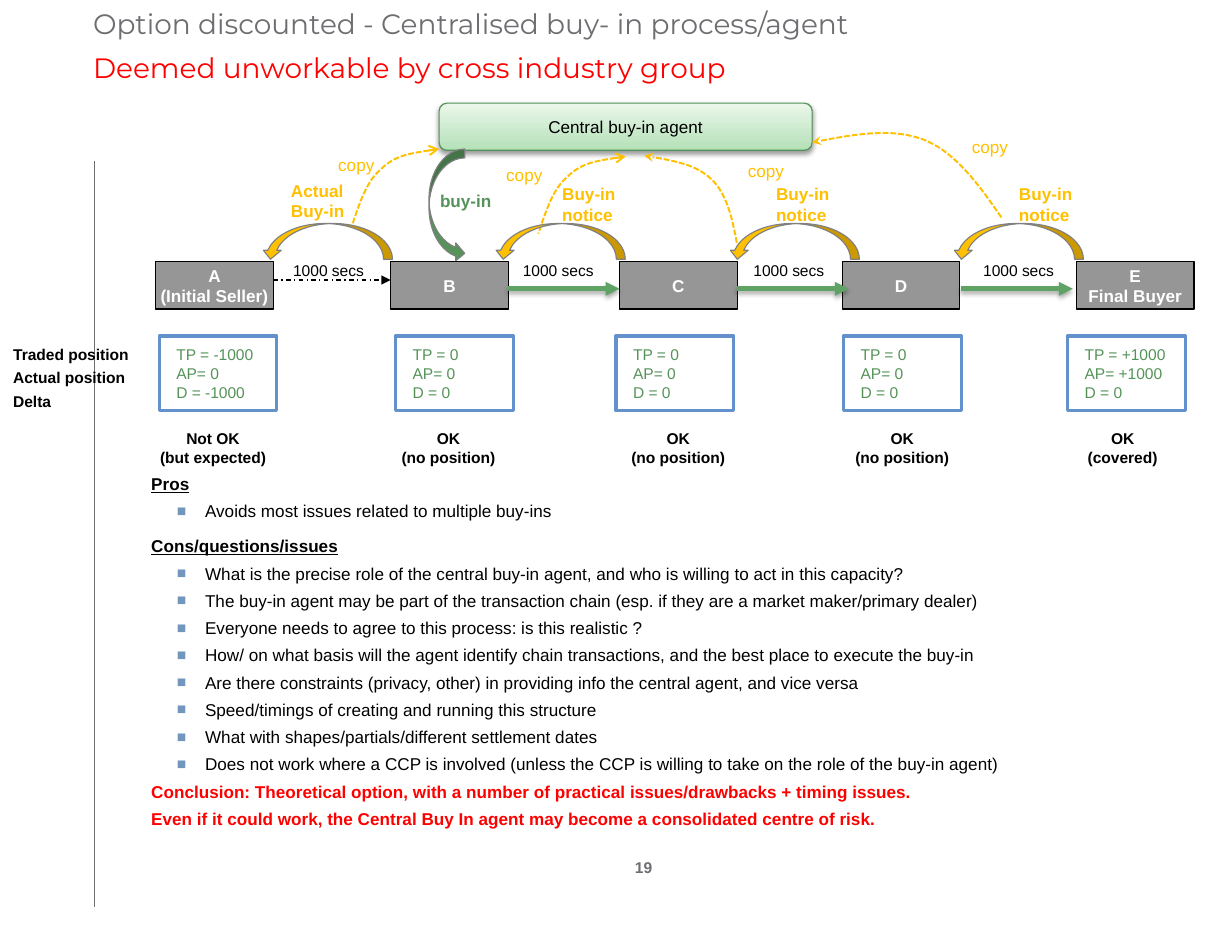
from lxml import etree
from pptx import Presentation
from pptx import oxml
from pptx import util as u
from pptx.dml import color
from pptx.enum import dml, shapes, text
from pptx.oxml import ns

BLACK = color.RGBColor(0x00, 0x00, 0x00)
WHITE = color.RGBColor(0xFF, 0xFF, 0xFF)
RED = color.RGBColor(0xFF, 0x00, 0x00)
SLATE = color.RGBColor(0x6D, 0x6E, 0x71)
GREY = color.RGBColor(0x96, 0x96, 0x96)
EDGE = color.RGBColor(0x80, 0x80, 0x80)
GREEN = color.RGBColor(0x55, 0x93, 0x5A)
ARROW_GREEN = color.RGBColor(0x5F, 0xA3, 0x64)
AGENT_EDGE = color.RGBColor(0x52, 0x91, 0x57)
AGENT_DARK = color.RGBColor(0xB4, 0xE1, 0xB7)
AGENT_LIGHT = color.RGBColor(0xEB, 0xF7, 0xEB)
GOLD = color.RGBColor(0xFF, 0xC0, 0x00)
BLUE = color.RGBColor(0x64, 0x90, 0xCB)
BULLET = color.RGBColor(0x73, 0x97, 0xBC)

SIDES = ("margin_left", "margin_top", "margin_right", "margin_bottom")
LEFT, CENTER = text.PP_ALIGN.LEFT, text.PP_ALIGN.CENTER
TOP, MIDDLE, BOTTOM = text.MSO_ANCHOR.TOP, text.MSO_ANCHOR.MIDDLE, text.MSO_ANCHOR.BOTTOM


class Page:
    font = "Arial"

    def __init__(self, deck):
        self.slide = deck.slides.add_slide(deck.slide_layouts[1])
        self.shapes = self.slide.shapes

    def apply(self, target, values):
        for name, value in values.items():
            setattr(target, name, value)

    def place(self, box, at):
        self.apply(box, dict(zip(("left", "top", "width", "height"), map(u.Cm, at))))

    def frame(self, box, anchor, margins):
        values = {"word_wrap": True, "auto_size": text.MSO_AUTO_SIZE.NONE, "vertical_anchor": anchor}
        values.update(zip(SIDES, map(u.Cm, margins)))
        self.apply(box.text_frame, values)
        return box.text_frame

    def span(self, para, words, size, ink, **values):
        span = para.add_run()
        span.text = words
        self.apply(span.font, {"name": self.font, "size": u.Pt(size), **values})
        span.font.color.rgb = ink

    def lettering(self, box, lines, size, ink, align=LEFT, anchor=TOP, margins=(0, 0, 0, 0), gap=0, **values):
        frame = self.frame(box, anchor, margins)
        for number, line in enumerate(lines):
            para = frame.add_paragraph() if number else frame.paragraphs[0]
            para.alignment = align
            para.space_before = u.Pt(gap if number else 0)
            for order, words in enumerate(line.split("\v")):
                if order:
                    para.add_line_break()
                self.span(para, words, size, ink, **values)

    def label(self, at, lines, size=10, ink=BLACK, **values):
        box = self.shapes.add_textbox(*map(u.Cm, at))
        self.lettering(box, lines, size, ink, **values)

    def tag(self, left, top, words, ink=GOLD, bold=True):
        self.label((left, top, 1.91, 1.19), [words], 11, ink, margins=(0.25, 0.13, 0.25, 0.13), bold=bold)

    def shape(self, kind, at, fill, edge, weight=0.75, turn=0):
        box = self.shapes.add_shape(kind, *map(u.Cm, at))
        box.shadow.inherit = False
        box.rotation = turn
        box.fill.solid()
        box.fill.fore_color.rgb = fill
        self.stroke(box, edge, weight)
        return box

    def stroke(self, item, ink, weight, dash=None, **ends):
        item.line.color.rgb = ink
        item.line.width = u.Pt(weight)
        if dash:
            item.line.dash_style = dash
        outline = item._element.spPr.find(ns.qn("a:ln"))
        for end, head in ends.items():
            etree.SubElement(outline, ns.qn("a:" + end), type=head)

    def shade(self, item, alpha):
        effects = item._element.spPr.find(ns.qn("a:effectLst"))
        effects.append(oxml.parse_xml(
            f'<a:outerShdw {ns.nsdecls("a")} blurRad="39370" dist="21000" dir="5400000" rotWithShape="0">'
            f'<a:srgbClr val="000000"><a:alpha val="{alpha * 1000}"/></a:srgbClr></a:outerShdw>'))

    def line(self, start, end, ink, weight, dash=None, **ends):
        line = self.shapes.add_connector(shapes.MSO_CONNECTOR.STRAIGHT, *map(u.Cm, start + end))
        self.stroke(line, ink, weight, dash, **ends)
        etree.SubElement(line._element.spPr, ns.qn("a:effectLst"))
        return line

    def curve(self, points, **ends):
        points = [(u.Cm(x), u.Cm(y)) for x, y in points]
        builder = self.shapes.build_freeform(*points[0])
        builder.add_line_segments(points[1:], close=False)
        curve = builder.convert_to_shape()
        curve.shadow.inherit = False
        curve.fill.background()
        outline = curve._element.find(".//" + ns.qn("a:path"))
        steps = outline.findall(ns.qn("a:lnTo"))
        for first in range(0, len(steps), 3):
            bend = etree.SubElement(outline, ns.qn("a:cubicBezTo"))
            for step in steps[first:first + 3]:
                bend.append(step[0])
                outline.remove(step)
        self.stroke(curve, GOLD, 1.25, dml.MSO_LINE.SQUARE_DOT, **ends)

    def title(self, at, lines):
        box = self.shapes.title
        self.place(box, at)
        para = self.frame(box, BOTTOM, (0, 0, 0, 0)).paragraphs[0]
        self.apply(para, {"alignment": LEFT, "line_spacing": u.Pt(27.9)})
        for number, (words, ink) in enumerate(lines):
            if number:
                para.add_line_break()
            self.span(para, words, 18, ink, name="Montserrat")

    def body(self, at, items):
        box = self.slide.placeholders[1]
        self.place(box, at)
        frame = self.frame(box, TOP, (0.25, 0.1, 0.1, 0.1))
        for number, (kind, words) in enumerate(items):
            para = frame.add_paragraph() if number else frame.paragraphs[0]
            bulleted = kind == "point"
            props = para._p.get_or_add_pPr()
            props.set("marL", str(u.Cm(1.22 if bulleted else 0.64)))
            props.set("indent", str(u.Cm(-0.64)))
            if bulleted:
                mark = etree.SubElement(props, ns.qn("a:buClr"))
                etree.SubElement(mark, ns.qn("a:srgbClr"), val=str(BULLET))
                etree.SubElement(props, ns.qn("a:buSzPct"), val="92000")
                etree.SubElement(props, ns.qn("a:buFont"), typeface="Arial")
                etree.SubElement(props, ns.qn("a:buChar"), char="■")
            else:
                etree.SubElement(props, ns.qn("a:buNone"))
            gap = (8 if kind == "head" else 3) if number else 0
            self.apply(para, {"level": int(bulleted), "alignment": LEFT,
                              "line_spacing": 1.1, "space_before": u.Pt(gap)})
            self.span(para, words, 11, RED if kind == "close" else BLACK,
                      bold=not bulleted, underline=kind == "head")


def main():
    deck = Presentation()
    deck.slide_width, deck.slide_height = u.Cm(27.94), u.Cm(21.59)
    page = Page(deck)
    kinds = shapes.MSO_SHAPE

    page.line((2.13, 3.66), (2.13, 20.57), SLATE, 0.35)
    page.title((2.11, 0.2, 22.86, 1.7), [
        ("Option discounted - Centralised buy- in process/agent", SLATE),
        ("Deemed unworkable by cross industry group", RED)])
    page.body((3.18, 10.59, 22.45, 8.46), [
        ("head", "Pros"),
        ("point", "Avoids most issues related to multiple buy-ins"),
        ("head", "Cons/questions/issues"),
        ("point", "What is the precise role of the central buy-in agent, and who is willing to act in this capacity?"),
        ("point", "The buy-in agent may be part of the transaction chain (esp. if they are a market maker/primary dealer)"),
        ("point", "Everyone needs to agree to this process: is this realistic ?"),
        ("point", "How/ on what basis will the agent identify chain transactions, and the best place to execute the buy-in"),
        ("point", "Are there constraints (privacy, other) in providing info the central agent, and vice versa"),
        ("point", "Speed/timings of creating and running this structure"),
        ("point", "What with shapes/partials/different settlement dates"),
        ("point", "Does not work where a CCP is involved (unless the CCP is willing to take on the role of the buy-in agent)"),
        ("close", "Conclusion: Theoretical option, with a number of practical issues/drawbacks + timing issues."),
        ("close", "Even if it could work, the Central Buy In agent may become a consolidated centre of risk.")])
    page.label((14.08, 19.46, 1.03, 0.43), ["19"], ink=SLATE, align=CENTER, anchor=MIDDLE, bold=True)

    agent = page.shape(kinds.FLOWCHART_ALTERNATE_PROCESS, (9.96, 2.34, 8.46, 1.07), AGENT_LIGHT, AGENT_EDGE)
    agent.fill.gradient()
    agent.fill.gradient_angle = 90
    for stop, ink in zip(agent.fill.gradient_stops, (AGENT_DARK, AGENT_LIGHT)):
        stop.color.rgb = ink
    page.shade(agent, 38)
    page.lettering(agent, ["Central buy-in agent"], 11, BLACK, CENTER, MIDDLE)

    flat = ["TP = 0", "AP= 0", "D = 0"]
    neutral = "OK\v(no position)"
    parties = [
        (3.53, ["A", "(Initial Seller)"], 3.61, ["TP = -1000", "AP= 0", "D = -1000"], 3.43, "Not OK\v(but expected)"),
        (8.86, ["B"], 8.97, flat, 8.77, neutral),
        (14.05, ["C"], 13.97, flat, 13.98, neutral),
        (19.1, ["D"], 19.13, flat, 19.06, neutral),
        (24.41, ["E", "Final Buyer"], 24.21, ["TP = +1000", "AP= +1000", "D = 0"], 24.06, "OK\v(covered)")]
    for party_left, party, position_left, position, verdict_left, verdict in parties:
        box = page.shape(kinds.RECTANGLE, (party_left, 5.94, 2.67, 1.07), GREY, BLACK)
        page.lettering(box, party, 11, WHITE, CENTER, MIDDLE, bold=True)
        box = page.shape(kinds.RECTANGLE, (position_left, 7.62, 2.67, 1.7), WHITE, BLUE, 2)
        page.lettering(box, position, 10, GREEN, LEFT, MIDDLE, (0.39, 0, 0, 0))
        page.label((verdict_left, 9.73, 2.8, 0.86), [verdict], align=CENTER, bold=True)
    page.label((0.3, 7.82, 3, 1.5), ["Traded position", "Actual position", "Delta"], gap=3, bold=True)

    page.line((6.2, 6.35), (8.86, 6.35), BLACK, 0.75, dml.MSO_LINE.DASH_DOT, tailEnd="triangle")
    for left in (11.51, 16.71, 21.79):
        page.shade(page.line((left, 6.55), (left + 2.54, 6.55), ARROW_GREEN, 3, tailEnd="triangle"), 35)
    for left in (6.45, 11.66, 16.89, 22.1):
        page.label((left, 5.92, 2, 0.43), ["1000 secs"], align=CENTER)

    page.shape(kinds.CURVED_RIGHT_ARROW, (9.73, 3.38, 0.81, 2.57), GREEN, EDGE)
    page.tag(9.73, 4.19, "buy-in", GREEN)
    page.tag(6.35, 3.96, "Actual Buy-in")
    for left in (12.5, 17.35, 22.86):
        page.tag(left, 4.03, "Buy-in notice")
    for left, top in ((7.42, 3.38), (11.23, 3.61), (16.71, 3.51), (21.79, 2.97)):
        page.tag(left, top, "copy", bold=False)

    page.curve([(22.71, 4.93), (22.2, 4.19), (21.69, 3.48), (20.98, 3.18),
                (20.27, 2.9), (19.33, 3.05), (18.42, 3.23)], tailEnd="stealth")
    page.curve([(16.71, 5.51), (16.61, 4.95), (16.48, 4.39), (16.13, 4.06),
                (15.77, 3.73), (15.19, 3.63), (14.61, 3.53)], tailEnd="stealth")
    rise = [(9.96, 3.38), (9.45, 3.45), (8.94, 3.53), (8.64, 3.84), (8.31, 4.11), (8.15, 4.62), (7.98, 5.13)]
    for across, down in ((0, 0), (4.23, 0.17)):
        page.curve([(x + across, y + down) for x, y in rise], headEnd="arrow")
    for left in (7.01, 12.29, 17.6, 22.68):
        page.shape(kinds.CURVED_RIGHT_ARROW, (left, 3.99, 0.81, 2.97), GOLD, EDGE, turn=90)

    deck.save("out.pptx")


if __name__ == "__main__":
    main()
